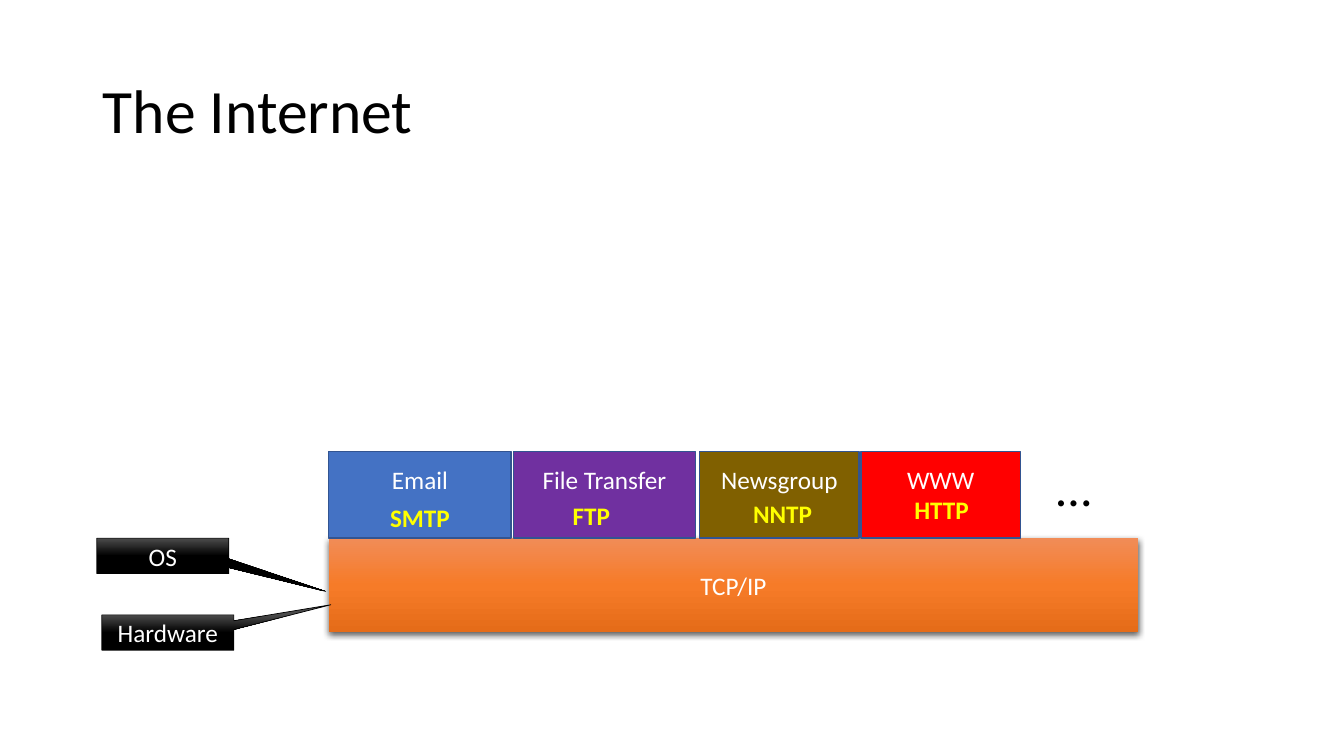
from lxml.etree import SubElement
from pptx import Presentation
from pptx.dml.color import RGBColor
from pptx.enum.shapes import MSO_SHAPE
from pptx.enum.text import MSO_ANCHOR, MSO_AUTO_SIZE, PP_ALIGN
from pptx.oxml.ns import qn
from pptx.util import Inches, Pt

COLORS = {
    "black": "000000", "white": "FFFFFF", "yellow": "FFFF00",
    "blue": "4472C4", "purple": "7030A0", "brown": "806000", "red": "FF0000",
    "outline": "325491",
    "orange light": "F18C57", "orange": "F67B28", "orange dark": "E56C19",
    "gray": "4B4B4B",
}
ORANGE_FADE = ("orange light", "orange", "orange dark")
BLACK_FADE = ("gray", "black", "black")

TITLE = "The Internet"
SERVICES = [
    ("Email", "blue", 3.26, 1.81),
    ("File Transfer", "purple", 5.09, 1.81),
    ("Newsgroup", "brown", 6.94, 1.58),
    ("WWW", "red", 8.54, 1.58),
]
PROTOCOLS = [
    ("SMTP", 3.77, 4.93, 0.8),
    ("FTP", 5.58, 4.91, 0.58),
    ("NNTP", 7.37, 4.89, 0.79),
    ("HTTP", 8.97, 4.86, 0.75),
]
CALLOUTS = [
    ("Hardware", 1.01, 6.1, (1.234, -0.787)),
    ("OS", 0.96, 5.34, (1.234, 1.007)),
]
SERVICE_TOP, SERVICE_HEIGHT = 4.48, 0.86
NETWORK_TOP = SERVICE_TOP + SERVICE_HEIGHT


def write(box, text, size=18, color="white", bold=False, align=PP_ALIGN.CENTER,
          anchor=MSO_ANCHOR.MIDDLE, wrap=True, spacing=None):
    frame = box.text_frame
    frame.word_wrap = wrap
    frame.auto_size = MSO_AUTO_SIZE.NONE if wrap else MSO_AUTO_SIZE.SHAPE_TO_FIT_TEXT
    frame.vertical_anchor = anchor
    para = frame.paragraphs[0]
    para.alignment = align
    para.line_spacing = spacing
    span = para.add_run()
    span.text = text
    span.font.name = "Calibri"
    span.font.size = Pt(size)
    span.font.bold = bold
    span.font.color.rgb = RGBColor.from_string(COLORS[color])


def add_box(page, kind, left, top, width, height, fill, line=None, weight=1):
    box = page.shapes.add_shape(kind, *map(Inches, (left, top, width, height)))
    box.shadow.inherit = False
    if isinstance(fill, tuple):
        fade(box, fill)
    else:
        box.fill.solid()
        box.fill.fore_color.rgb = RGBColor.from_string(COLORS[fill])
    if line:
        box.line.color.rgb = RGBColor.from_string(COLORS[line])
        box.line.width = Pt(weight)
    else:
        box.line.fill.background()
    return box


def fade(box, names):
    box.fill.gradient()
    box.fill.gradient_angle = 270
    stops = box._element.spPr.find(".//" + qn("a:gsLst"))
    for stop in list(stops):
        stops.remove(stop)
    for index, name in enumerate(names):
        stop = SubElement(stops, qn("a:gs"), pos=str(index * 50000))
        SubElement(stop, qn("a:srgbClr"), val=COLORS[name])


def add_shadow(box):
    effects = box._element.spPr.find(qn("a:effectLst"))
    shadow = SubElement(effects, qn("a:outerShdw"), blurRad=str(Pt(4.5)),
                        dist=str(Pt(1.5)), dir="5400000", algn="ctr", rotWithShape="0")
    color = SubElement(shadow, qn("a:srgbClr"), val=COLORS["black"])
    SubElement(color, qn("a:alpha"), val="63000")


def add_label(page, text, left, top, width, height, **style):
    label = page.shapes.add_textbox(*map(Inches, (left, top, width, height)))
    write(label, text, align=PP_ALIGN.LEFT, anchor=MSO_ANCHOR.TOP, wrap=False, **style)


def main():
    deck = Presentation()
    deck.slide_width, deck.slide_height = Inches(13.33), Inches(7.5)
    page = deck.slides.add_slide(deck.slide_layouts[5])

    title = page.shapes.title
    title.left, title.top = Inches(0.92), Inches(0.4)
    title.width, title.height = Inches(11.5), Inches(1.45)
    write(title, TITLE, size=44, color="black", align=PP_ALIGN.LEFT, spacing=0.9)

    network = add_box(page, MSO_SHAPE.RECTANGLE, 3.26, NETWORK_TOP, 8.03, 0.93, ORANGE_FADE)
    add_shadow(network)
    write(network, "TCP/IP")

    for name, color, left, width in SERVICES:
        service = add_box(page, MSO_SHAPE.RECTANGLE, left, SERVICE_TOP, width,
                          SERVICE_HEIGHT, color, line="outline")
        write(service, name, anchor=MSO_ANCHOR.TOP)
        service.text_frame.margin_top = Inches(0.13)

    add_label(page, "…", 10.38, SERVICE_TOP, 0.55, 0.71, size=36, color="black")

    for name, left, top, pointer in CALLOUTS:
        callout = add_box(page, MSO_SHAPE.RECTANGULAR_CALLOUT, left, top, 1.31, 0.35,
                          BLACK_FADE, line="black", weight=0.5)
        callout.adjustments[0], callout.adjustments[1] = pointer
        write(callout, name)

    for name, left, top, width in PROTOCOLS:
        add_label(page, name, left, top, width, 0.4, color="yellow", bold=True)

    deck.save("out.pptx")


if __name__ == "__main__":
    main()
